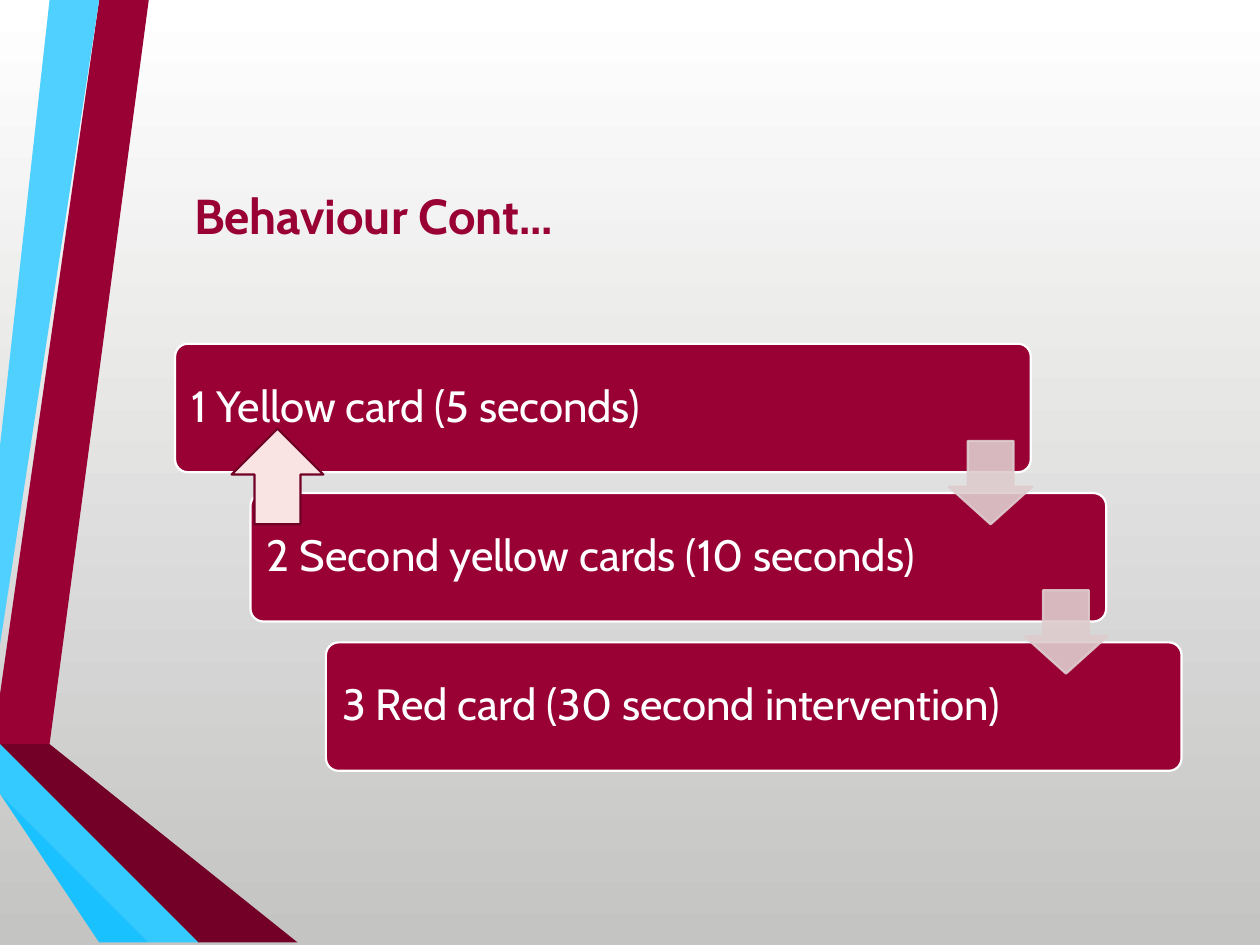
from lxml.etree import SubElement
from pptx import Presentation
from pptx.dml.color import RGBColor
from pptx.enum.shapes import MSO_SHAPE
from pptx.enum.text import MSO_ANCHOR, PP_ALIGN
from pptx.oxml.ns import qn
from pptx.util import Cm, Pt

FONT = "Cabin"
CRIMSON = "990033"
WHITE = "FFFFFF"
BACKGROUND = ("FFFFFF", "C4C4C3")
TITLE = "Behaviour Cont..."
CARDS = [
    ("1 Yellow card (5 seconds)", 14.48),
    ("2 Second yellow cards (10 seconds)", 13.89),
    ("3 Red card (30 second intervention)", 13.89),
]
RIBBONS = [
    (CRIMSON, [(0, 13.82), (0, 14.6), (0.56, 14.71), (2.97, 0), (2.26, 0)]),
    ("50D0FF", [(2.11, 0), (1.4, 0), (0, 8.53), (0, 12.85)]),
    ("19C2FF", [(0, 15.72), (0, 15.77), (2.36, 19.05), (2.51, 19.05)]),
    ("4C0019", [(0, 14.71), (0, 14.73), (3.96, 19.05), (4.14, 19.05)]),
    ("730026", [(0, 14.71), (4.14, 19.05), (5.92, 19.05), (0.56, 14.71), (0, 14.6)]),
    ("34C9FF", [(0, 15.72), (2.51, 19.05), (3.84, 19.05), (0, 14.88)]),
]
CARD_LEFT, CARD_TOP, CARD_WIDTH, CARD_HEIGHT = 3.53, 6.93, 17.25, 2.59
STEP_X, STEP_Y = 1.52, 3.01
TEXT_INSET = 0.08
ARROW_LEFT, ARROW_TOP, ARROW_SIZE = 19.13, 8.89, 1.68


def color(value):
    return RGBColor.from_string(value)


def style(shape, fill, line=None, opacity=None):
    shape.shadow.inherit = False
    shape.fill.solid()
    shape.fill.fore_color.rgb = color(fill)
    if line:
        shape.line.color.rgb = color(line)
        shape.line.width = Pt(1.25)
    else:
        shape.line.fill.background()
    if opacity:
        for element in shape.element.spPr.iter(qn("a:srgbClr")):
            SubElement(element, qn("a:alpha"), val=str(opacity * 1000))


def add_block(slide, preset, left, top, width, height, adjustments=(), **look):
    shape = slide.shapes.add_shape(preset, Cm(left), Cm(top), Cm(width), Cm(height))
    for index, value in enumerate(adjustments):
        shape.adjustments[index] = value
    style(shape, **look)


def write(shape, text, size, hue, bold=False, spacing=1.0):
    frame = shape.text_frame
    frame.word_wrap = True
    frame.vertical_anchor = MSO_ANCHOR.MIDDLE
    paragraph = frame.paragraphs[0]
    paragraph.alignment = PP_ALIGN.LEFT
    paragraph.line_spacing = spacing
    run = paragraph.add_run()
    run.text = text
    run.font.name = FONT
    run.font.size = Pt(size)
    run.font.bold = bold
    run.font.color.rgb = color(hue)


def add_ribbon(slide, fill, points):
    builder = slide.shapes.build_freeform(*points[0], scale=Cm(1))
    builder.add_line_segments(points[1:], close=True)
    style(builder.convert_to_shape(), fill)


def add_card(slide, index, text, text_width):
    left, top = CARD_LEFT + index * STEP_X, CARD_TOP + index * STEP_Y
    add_block(slide, MSO_SHAPE.ROUNDED_RECTANGLE, left, top, CARD_WIDTH, CARD_HEIGHT,
              [0.1], fill=CRIMSON, line=WHITE)
    box = slide.shapes.add_textbox(Cm(left + TEXT_INSET), Cm(top + TEXT_INSET),
                                   Cm(text_width), Cm(CARD_HEIGHT - 2 * TEXT_INSET))
    frame = box.text_frame
    frame.margin_left = frame.margin_right = Cm(0.25)
    frame.margin_top = frame.margin_bottom = Cm(0.25)
    write(box, text, 25, WHITE, spacing=0.9)


def main():
    presentation = Presentation()
    presentation.slide_width, presentation.slide_height = Cm(25.4), Cm(19.05)
    slide = presentation.slides.add_slide(presentation.slide_layouts[5])

    background = slide.background.fill
    background.gradient()
    background.gradient_angle = 270
    for position, (stop, hue) in enumerate(zip(background.gradient_stops, BACKGROUND)):
        stop.position = position
        stop.color.rgb = color(hue)

    for fill, points in RIBBONS:
        add_ribbon(slide, fill, points)

    title = slide.shapes.title
    title.left, title.top, title.width, title.height = Cm(3.66), Cm(1.9), Cm(20.29), Cm(4.88)
    write(title, TITLE, 28, CRIMSON, bold=True)

    for index, (text, text_width) in enumerate(CARDS):
        add_card(slide, index, text, text_width)
    for index in range(len(CARDS) - 1):
        add_block(slide, MSO_SHAPE.DOWN_ARROW, ARROW_LEFT + index * STEP_X,
                  ARROW_TOP + index * STEP_Y, ARROW_SIZE, ARROW_SIZE, [0.55, 0.45],
                  fill="DECCCE", line="DECCCE", opacity=90)
    add_block(slide, MSO_SHAPE.UP_ARROW, 4.67, 8.64, 1.85, 1.93,
              fill="FAE3E3", line="710026")

    presentation.save("out.pptx")


if __name__ == "__main__":
    main()
